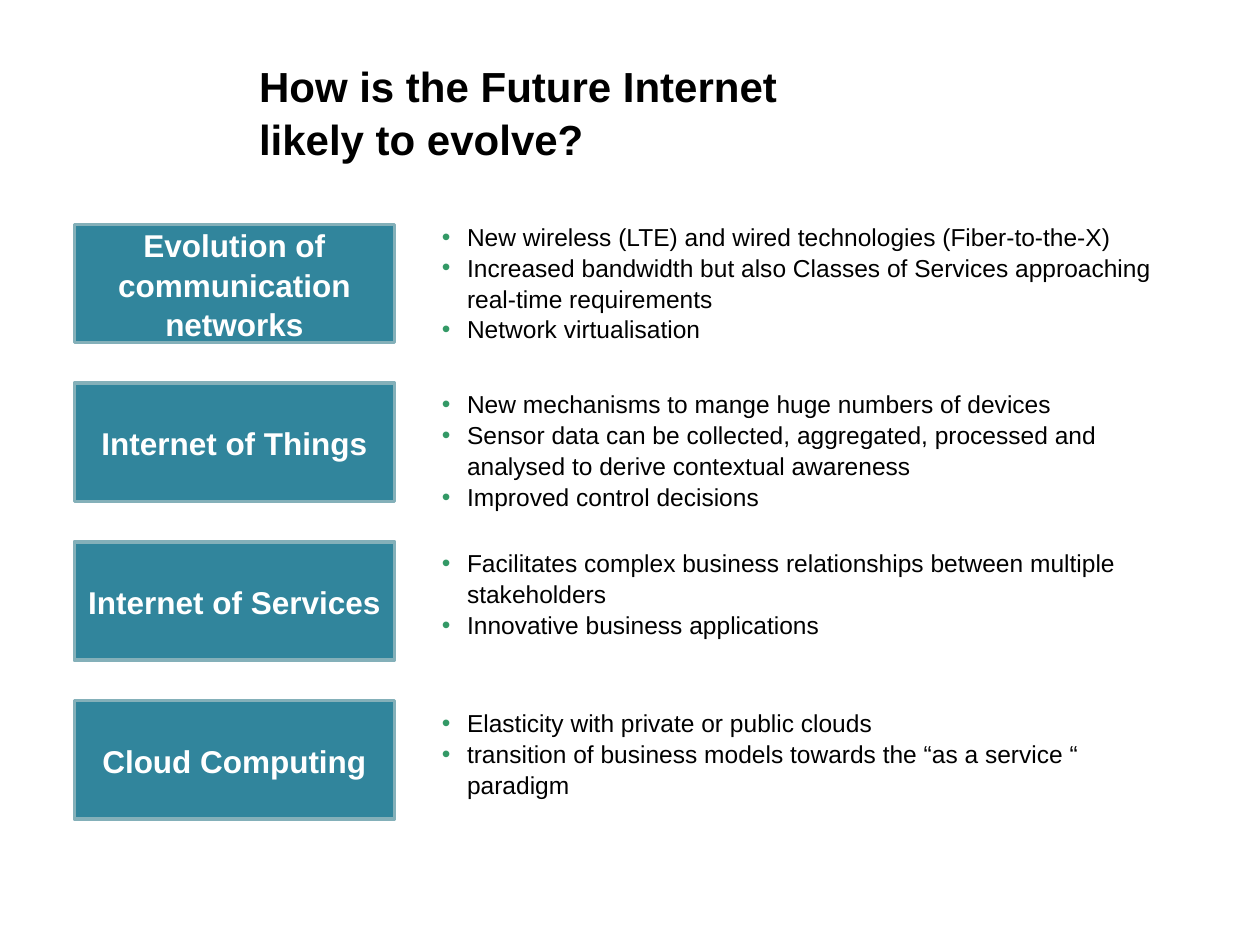
from pptx import Presentation
from pptx.dml.color import RGBColor as RGB
from pptx.enum.shapes import MSO_SHAPE as Shape
from pptx.enum.text import MSO_ANCHOR as Anchor, PP_ALIGN as Align
from pptx.oxml.ns import qn
from pptx.util import Pt
from lxml.etree import SubElement as Sub

BLACK = RGB(0x00, 0x00, 0x00)
WHITE = RGB(0xFF, 0xFF, 0xFF)
TEAL = RGB(0x31, 0x85, 0x9C)
EDGE = RGB(0x84, 0xB0, 0xB9)
GREEN = RGB(0x33, 0x99, 0x66)

TOP, STEP = 128.2, 90.7

TOPICS = [
    ("Evolution of communication networks", 122.4, 74.2, [
        "New wireless (LTE) and wired technologies (Fiber-to-the-X)",
        "Increased bandwidth but also Classes of Services approaching real-time requirements",
        "Network virtualisation",
    ]),
    ("Internet of Things", 218.2, 74.2, [
        "New mechanisms to mange huge numbers of devices",
        "Sensor data can be collected, aggregated, processed and analysed to derive contextual awareness",
        "Improved control decisions",
    ]),
    ("Internet of Services", 308.9, 57.6, [
        "Facilitates complex business relationships between multiple stakeholders",
        "Innovative business applications",
    ]),
    ("Cloud Computing", 400.3, 57.6, [
        "Elasticity with private or public clouds",
        "transition of business models towards the “as a service “ paradigm",
    ]),
]


class Deck:
    face = "Arial"
    pitch = 1.05

    def __init__(self, wide, high):
        self.prs = Presentation()
        self.prs.slide_width, self.prs.slide_height = Pt(wide), Pt(high)
        self.slide = self.prs.slides.add_slide(self.prs.slide_layouts[6])

    def run(self, para, text, size, color, bold=False):
        para.line_spacing = self.pitch
        run = para.add_run()
        run.text = text
        font = run.font
        font.name, font.size, font.bold = self.face, Pt(size), bold
        font.color.rgb = color

    def frame(self, x, y, w, h):
        box = self.slide.shapes.add_textbox(Pt(x), Pt(y), Pt(w), Pt(h))
        box.text_frame.word_wrap = True
        return box.text_frame

    def title(self, lines, x, y, w, h):
        para = self.frame(x, y, w, h).paragraphs[0]
        for i, line in enumerate(lines):
            if i:
                para.add_line_break()
            self.run(para, line, 24, BLACK, True)

    def label(self, text, x, y, w, h):
        box = self.slide.shapes.add_shape(Shape.RECTANGLE, Pt(x), Pt(y), Pt(w), Pt(h))
        box.shadow.inherit = False
        box.fill.solid()
        box.fill.fore_color.rgb = TEAL
        box.line.color.rgb = EDGE
        box.line.width = Pt(2)
        frame = box.text_frame
        frame.word_wrap = True
        frame.vertical_anchor = Anchor.MIDDLE
        para = frame.paragraphs[0]
        para.alignment = Align.CENTER
        self.run(para, text, 18, WHITE, True)

    def bullets(self, items, x, y, w, h):
        frame = self.frame(x, y, w, h)
        for i, item in enumerate(items):
            para = frame.add_paragraph() if i else frame.paragraphs[0]
            para.level = 1
            self.dot(para)
            self.run(para, item, 14, BLACK)

    def dot(self, para):
        props = para._p.get_or_add_pPr()
        props.set("marL", str(Pt(28.8)))
        props.set("indent", str(Pt(-14.4)))
        tint = Sub(props, qn("a:buClr"))
        Sub(tint, qn("a:srgbClr"), val=str(GREEN))
        Sub(props, qn("a:buFont"), typeface=self.face)
        Sub(props, qn("a:buChar"), char="•")


def main():
    deck = Deck(720, 540)
    deck.title(["How is the Future Internet", "likely to evolve?"], 141, 29.5, 460, 62.6)
    for i, (name, top, high, items) in enumerate(TOPICS):
        deck.label(name, 42.5, TOP + i * STEP, 183, 67.7)
        deck.bullets(items, 231, top, 439, high)
    deck.prs.save("out.pptx")


if __name__ == "__main__":
    main()
